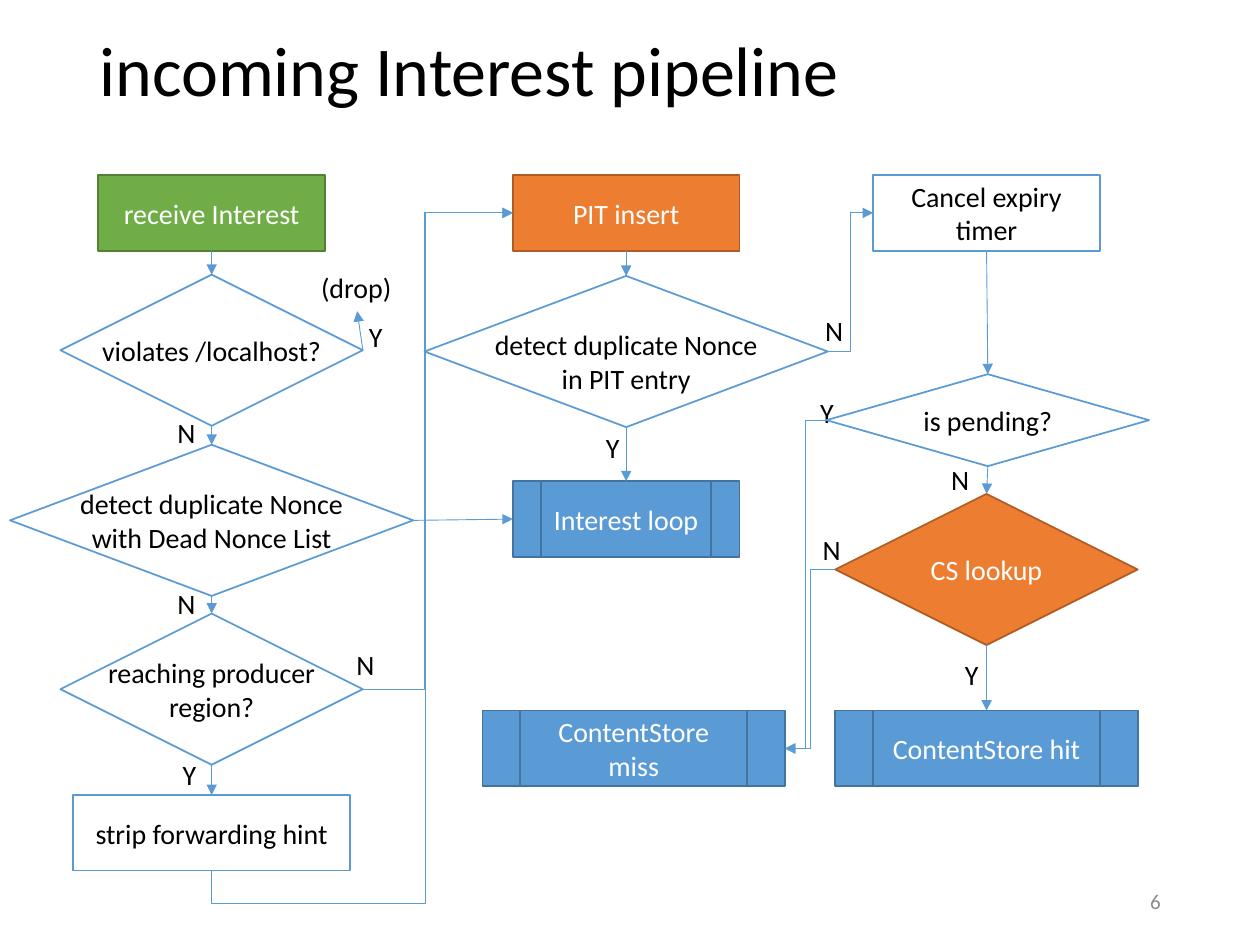
from dataclasses import dataclass

from lxml.etree import SubElement
from pptx import Presentation
from pptx.dml.color import RGBColor
from pptx.enum.shapes import MSO_CONNECTOR, MSO_SHAPE
from pptx.enum.text import MSO_ANCHOR, MSO_AUTO_SIZE, PP_ALIGN
from pptx.oxml.ns import qn
from pptx.util import Inches, Pt


@dataclass(frozen=True)
class Theme:
    """Colours, font and type sizes of the slide."""
    font: str = "Calibri"
    title: int = 40
    body: int = 16
    number: int = 12
    black: str = "000000"
    white: str = "FFFFFF"
    grey: str = "8C8C8C"
    blue: str = "5B9BD5"
    blue_edge: str = "43739E"
    orange: str = "ED7D31"
    orange_edge: str = "AF5C24"
    green: str = "70AD47"
    green_edge: str = "538035"


T = Theme()
TOP, LEFT, BOTTOM, RIGHT = range(4)
PLAIN = (T.white, T.blue, T.black)
BLUE = (T.blue, T.blue_edge, T.white)
ORANGE = (T.orange, T.orange_edge, T.white)
GREEN = (T.green, T.green_edge, T.white)
BOX = MSO_SHAPE.RECTANGLE
DECISION = MSO_SHAPE.FLOWCHART_DECISION
PROCESS = MSO_SHAPE.FLOWCHART_PREDEFINED_PROCESS

NODES = {
    "cs": (DECISION, 6.63, 3.92, 2.4, 1.2, "CS lookup", ORANGE),
    "pit": (BOX, 4.07, 1.39, 1.8, 0.6, "PIT insert", ORANGE),
    "cancel": (BOX, 6.93, 1.39, 1.8, 0.6, "Cancel expiry timer", PLAIN),
    "receive": (BOX, 0.78, 1.39, 1.8, 0.6, "receive Interest", GREEN),
    "pit_nonce": (DECISION, 3.37, 2.19, 3.2, 1.2,
                  "detect duplicate Nonce\vin PIT entry", PLAIN),
    "loop": (PROCESS, 4.07, 3.82, 1.8, 0.6, "Interest loop", BLUE),
    "pending": (DECISION, 6.56, 2.97, 2.56, 0.73, "is pending?", PLAIN),
    "localhost": (DECISION, 0.48, 2.18, 2.4, 1.2, "violates /localhost?", PLAIN),
    "miss": (PROCESS, 3.83, 5.64, 2.4, 0.6, "ContentStore miss", BLUE),
    "hit": (PROCESS, 6.63, 5.64, 2.4, 0.6, "ContentStore hit", BLUE),
    "dead_nonce": (DECISION, 0.08, 3.53, 3.2, 1.2,
                   "detect duplicate Nonce\vwith Dead Nonce List", PLAIN),
    "region": (DECISION, 0.48, 4.87, 2.4, 1.2, "reaching producer\nregion?", PLAIN),
    "strip": (BOX, 0.58, 6.31, 2.2, 0.6, "strip forwarding hint", PLAIN),
}
UNWRAPPED = {"pit_nonce", "localhost", "dead_nonce", "region"}

YES = [(6.41, 3.09), (2.83, 2.49), (4.71, 3.37), (1.35, 5.96), (7.56, 5.17)]
NO = [(1.31, 3.25), (1.31, 4.61), (7.45, 3.62), (6.45, 2.44), (2.73, 5.09),
      (6.43, 4.18)]

STRAIGHT = [
    ("receive", BOTTOM, "localhost", TOP),
    ("localhost", RIGHT, "drop", BOTTOM),
    ("localhost", BOTTOM, "dead_nonce", TOP),
    ("dead_nonce", BOTTOM, "region", TOP),
    ("dead_nonce", RIGHT, "loop", LEFT),
    ("region", BOTTOM, "strip", TOP),
    ("pit", BOTTOM, "pit_nonce", TOP),
    ("pit_nonce", BOTTOM, "loop", TOP),
    ("cancel", BOTTOM, "pending", TOP),
    ("pending", BOTTOM, "cs", TOP),
    ("cs", BOTTOM, "hit", TOP),
]
BENT = [
    ("pit_nonce", RIGHT, "cancel", LEFT, 0.5),
    ("region", RIGHT, "pit", LEFT, 0.41),
    ("pending", LEFT, "miss", RIGHT, 0.5),
    ("cs", LEFT, "miss", RIGHT, 0.5),
]


def write(tf, text, size=T.body, color=T.black, align=PP_ALIGN.LEFT,
          anchor=MSO_ANCHOR.TOP, wrap=True, spacing=None):
    """Fill a text frame with formatted text."""
    tf.text = text
    tf.word_wrap = wrap
    tf.vertical_anchor = anchor
    for p in tf.paragraphs:
        p.alignment = align
        p.line_spacing = spacing
        for r in p.runs:
            r.font.name = T.font
            r.font.size = Pt(size)
            r.font.color.rgb = RGBColor.from_string(color)


def add_text(slide, x, y, w, h, text, **fmt):
    """Add a text box."""
    sp = slide.shapes.add_textbox(Inches(x), Inches(y), Inches(w), Inches(h))
    write(sp.text_frame, text, **fmt)
    return sp


def add_label(slide, x, y, w, text):
    """Add an unwrapped label that grows with its text."""
    sp = add_text(slide, x, y, w, 0.37, text, wrap=False)
    sp.text_frame.auto_size = MSO_AUTO_SIZE.SHAPE_TO_FIT_TEXT
    return sp


def add_node(slide, kind, x, y, w, h, text, style, wrap=True):
    """Add a flowchart step."""
    fill, edge, color = style
    sp = slide.shapes.add_shape(kind, Inches(x), Inches(y), Inches(w), Inches(h))
    sp.shadow.inherit = False
    sp.fill.solid()
    sp.fill.fore_color.rgb = RGBColor.from_string(fill)
    sp.line.color.rgb = RGBColor.from_string(edge)
    sp.line.width = Pt(1)
    write(sp.text_frame, text, color=color, align=PP_ALIGN.CENTER,
          anchor=MSO_ANCHOR.MIDDLE, wrap=wrap)
    return sp


def site(sp, side):
    """Return the middle of one side of a shape."""
    dx, dy = {TOP: (1, 0), LEFT: (0, 1), BOTTOM: (1, 2), RIGHT: (2, 1)}[side]
    return sp.left + sp.width * dx // 2, sp.top + sp.height * dy // 2


def add_arrow(slide, kind, start, end):
    """Add a thin connector with a triangle at its end."""
    cxn = slide.shapes.add_connector(kind, *start, *end)
    cxn.line.color.rgb = RGBColor.from_string(T.blue)
    cxn.line.width = Pt(0.5)
    SubElement(cxn.line._get_or_add_ln(), qn("a:tailEnd"), type="triangle")
    SubElement(cxn._element.spPr, qn("a:effectLst"))
    return cxn


def set_bends(cxn, preset, *bends):
    """Set the preset and bend positions of an elbow connector."""
    geom = cxn._element.spPr.find(qn("a:prstGeom"))
    geom.set("prst", preset)
    guides = geom.find(qn("a:avLst"))
    for i, bend in enumerate(bends, 1):
        SubElement(guides, qn("a:gd"), name=f"adj{i}",
                   fmla=f"val {round(bend * 100000)}")


def link(slide, shapes, source, out, target, into, bend=None):
    """Connect two steps with a straight or bent arrow."""
    a, b = shapes[source], shapes[target]
    kind = MSO_CONNECTOR.STRAIGHT if bend is None else MSO_CONNECTOR.ELBOW
    cxn = add_arrow(slide, kind, site(a, out), site(b, into))
    cxn.begin_connect(a, out)
    cxn.end_connect(b, into)
    if bend is not None:
        set_bends(cxn, "bentConnector3", bend)


def link_around(slide, a, b, *bends):
    """Lead from the bottom of one step around to the left of another."""
    (x1, y1), (x2, y2) = site(a, BOTTOM), site(b, LEFT)
    cx, cy = (x1 + x2) // 2, (y1 + y2) // 2
    dx, dy = (y1 - y2) // 2, (x2 - x1) // 2
    cxn = add_arrow(slide, MSO_CONNECTOR.ELBOW, (cx + dx, cy + dy), (cx - dx, cy - dy))
    cxn._element.spPr.find(qn("a:xfrm")).set("rot", "5400000")
    set_bends(cxn, "bentConnector4", *bends)


def main():
    """Build the slide and save it."""
    prs = Presentation()
    prs.slide_width, prs.slide_height = Inches(10), Inches(7.5)
    slide = prs.slides.add_slide(prs.slide_layouts[6])
    add_text(slide, 0.69, 0.02, 8.62, 1.14, "incoming Interest pipeline",
             size=T.title, anchor=MSO_ANCHOR.MIDDLE, spacing=0.9)
    add_text(slide, 7.06, 6.95, 2.25, 0.4, "6", size=T.number, color=T.grey,
             align=PP_ALIGN.RIGHT, anchor=MSO_ANCHOR.MIDDLE)
    for x, y in YES:
        add_label(slide, x, y, 0.31, "Y")
    for x, y in NO:
        add_label(slide, x, y, 0.35, "N")
    shapes = {"drop": add_label(slide, 2.45, 2.1, 0.77, "(drop)")}
    for name, node in NODES.items():
        shapes[name] = add_node(slide, *node, wrap=name not in UNWRAPPED)
    shapes["pit_nonce"].text_frame.margin_top = Inches(0.2)
    for ends in STRAIGHT + BENT:
        link(slide, shapes, *ends)
    link_around(slide, shapes["strip"], shapes["pit"], -0.05, 0.71)
    prs.save("out.pptx")


if __name__ == "__main__":
    main()
